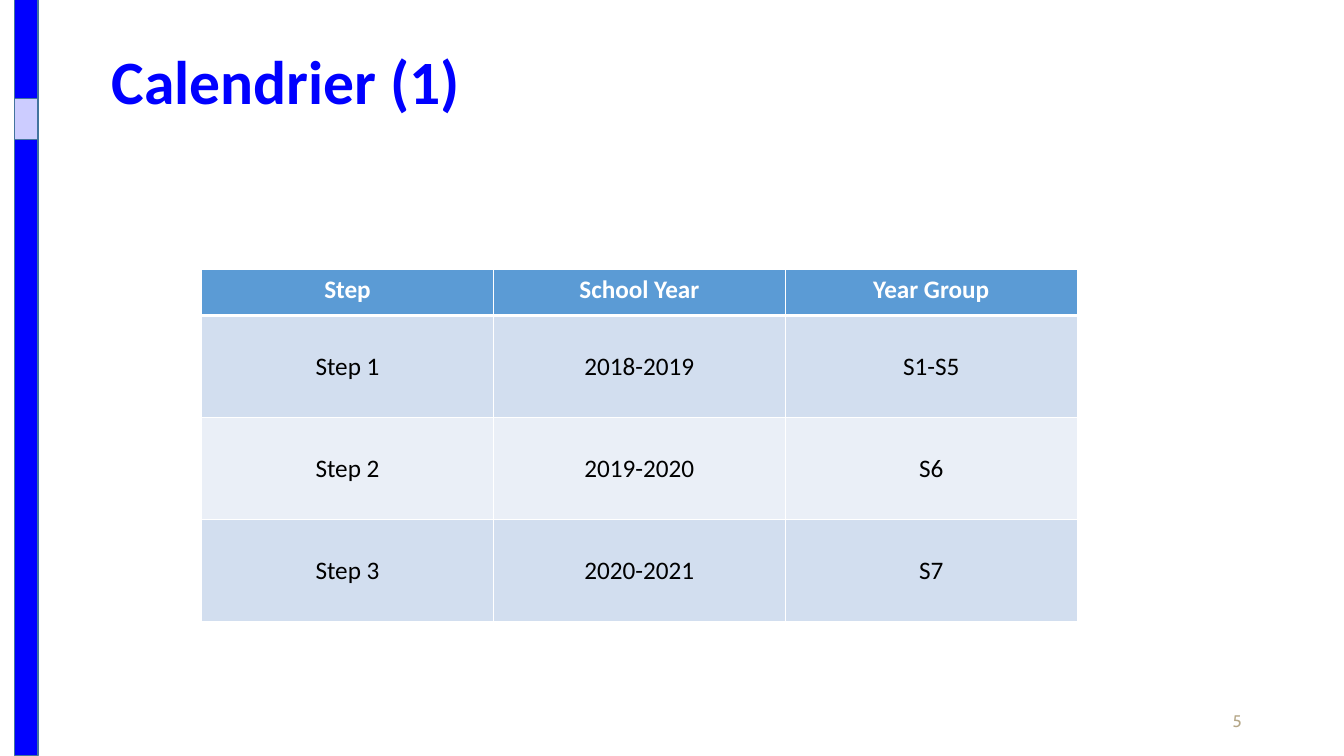
from lxml import etree
from pptx import Presentation
from pptx.dml.color import RGBColor
from pptx.enum import shapes, text
from pptx.oxml import ns
from pptx.util import Pt

COLORS = {
    "blue": "0000FF", "lilac": "CCCCFF", "outline": "43739E",
    "header": "5B9BD5", "band_dark": "D2DEEF", "band_light": "EAEFF7",
    "white": "FFFFFF", "black": "000000", "number": "B5A788",
}
ROWS = [
    ("Step", "School Year", "Year Group"),
    ("Step 1", "2018-2019", "S1-S5"),
    ("Step 2", "2019-2020", "S6"),
    ("Step 3", "2020-2021", "S7"),
]


class SlideBuilder:
    def __init__(self, slide, font="Calibri"):
        self.slide = slide
        self.font = font

    def color(self, name):
        return RGBColor.from_string(COLORS[name])

    def set_text(self, tf, content, size, color, bold=False, align=text.PP_ALIGN.LEFT, font=None):
        tf.text = content
        p = tf.paragraphs[0]
        p.alignment = align
        f = p.runs[0].font
        f.name, f.size, f.bold = font or self.font, Pt(size), bold
        f.color.rgb = self.color(color)
        return p

    def text_box(self, box, content, size, color, inset=7.2, **style):
        sp = self.slide.shapes.add_textbox(*map(Pt, box))
        tf = sp.text_frame
        tf.word_wrap = True
        tf.vertical_anchor = text.MSO_ANCHOR.MIDDLE
        tf.margin_left = Pt(inset)
        return self.set_text(tf, content, size, color, **style)

    def rect(self, box, fill):
        sp = self.slide.shapes.add_shape(shapes.MSO_SHAPE.RECTANGLE, *map(Pt, box))
        sp.shadow.inherit = False
        sp.fill.solid()
        sp.fill.fore_color.rgb = self.color(fill)
        sp.line.color.rgb = self.color("outline")
        sp.line.width = Pt(1)

    def borders(self, cell, **widths):
        """Draw white borders; keys are the sides L, R, T and B."""
        props = cell._tc.get_or_add_tcPr()
        for side, width in widths.items():
            ln = etree.SubElement(props, ns.qn("a:ln" + side), w=str(Pt(width)))
            solid = etree.SubElement(ln, ns.qn("a:solidFill"))
            etree.SubElement(solid, ns.qn("a:srgbClr"), val=COLORS["white"])

    def table(self, box, rows, header_height):
        left, top, width, height = box
        tbl = self.slide.shapes.add_table(len(rows), len(rows[0]), *map(Pt, box)).table
        for col in tbl.columns:
            col.width = Pt(width / len(rows[0]))
        body_height = (height - header_height) / (len(rows) - 1)
        for i, values in enumerate(rows):
            head = i == 0
            tbl.rows[i].height = Pt(header_height if head else body_height)
            fill = "header" if head else ("band_dark" if i % 2 else "band_light")
            for j, value in enumerate(values):
                cell = tbl.cell(i, j)
                self.borders(cell, L=1, R=1, T=3 if i == 1 else 1, B=3 if head else 1)
                cell.fill.solid()
                cell.fill.fore_color.rgb = self.color(fill)
                cell.vertical_anchor = text.MSO_ANCHOR.TOP if head else text.MSO_ANCHOR.MIDDLE
                self.set_text(cell.text_frame, value, 18, "white" if head else "black",
                              bold=head, align=text.PP_ALIGN.CENTER)


def main():
    prs = Presentation()
    prs.slide_width, prs.slide_height = Pt(960), Pt(540)
    builder = SlideBuilder(prs.slides.add_slide(prs.slide_layouts[6]))

    title = builder.text_box((66, 8, 828, 104.4), "Calendrier (1)", 44, "blue",
                             inset=13.7, bold=True)
    title.line_spacing = 0.9
    builder.text_box((678, 500.5, 216, 28.75), "5", 12, "number",
                     align=text.PP_ALIGN.RIGHT, font="Cabin")
    builder.table((144, 192.4, 625.5, 251.8), ROWS, header_height=33)
    builder.rect((10.3, -0.5, 16.8, 540), "blue")
    builder.rect((10.3, 70.3, 16.8, 29.5), "lilac")
    prs.save("out.pptx")


if __name__ == "__main__":
    main()
